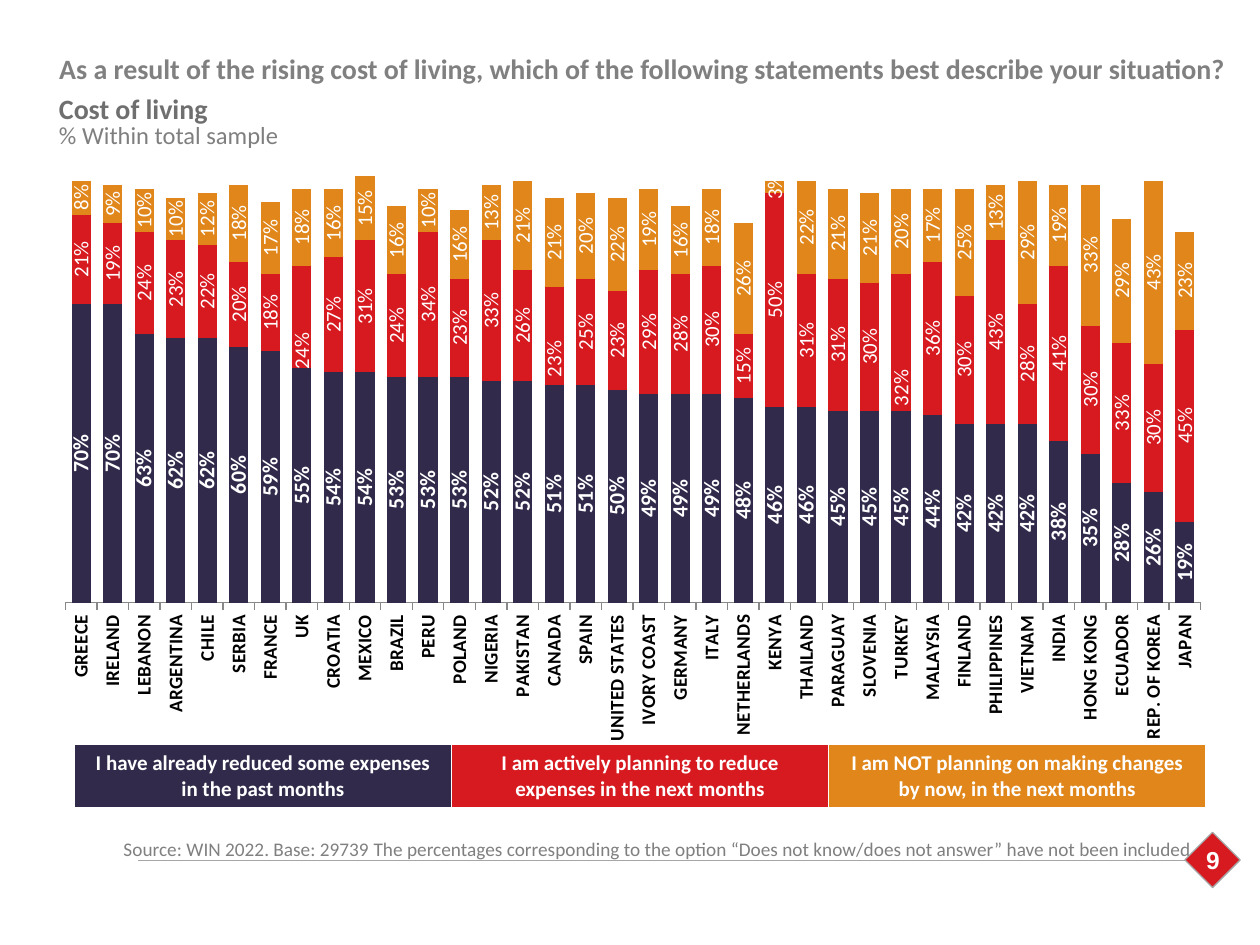
from dataclasses import dataclass
from typing import NamedTuple

from lxml.etree import SubElement
from pptx import Presentation
from pptx.chart.data import CategoryChartData
from pptx.dml.color import RGBColor
from pptx.enum.chart import XL_CHART_TYPE, XL_LABEL_POSITION, XL_TICK_MARK
from pptx.enum.shapes import MSO_CONNECTOR, MSO_SHAPE
from pptx.enum.text import MSO_ANCHOR, PP_ALIGN
from pptx.oxml.ns import qn
from pptx.oxml.xmlchemy import OxmlElement
from pptx.util import Cm, Pt


@dataclass(frozen=True)
class Theme:
    font: str = "Calibri"
    number_font: str = "Arial"
    navy: str = "312A4B"
    red: str = "D71920"
    orange: str = "E0861A"
    white: str = "FFFFFF"
    black: str = "000000"
    title: str = "808080"
    heading: str = "6F6F6F"
    muted: str = "7F7F7F"
    rule: str = "A6A6A6"
    axis: str = "888888"
    title_size: float = 16
    text_size: float = 14
    legend_size: float = 12
    small_size: float = 11


class Box(NamedTuple):
    """Left, top, width and height in centimetres."""
    x: float
    y: float
    w: float
    h: float

    def emu(self) -> list:
        return [Cm(v) for v in self]


class Answer(NamedTuple):
    text: str
    color: str
    label_size: float
    bold: bool
    percents: list
    label_shifts: dict  # category -> downward shift, share of chart height


T = Theme()

COUNTRIES = [
    "GREECE", "IRELAND", "LEBANON", "ARGENTINA", "CHILE", "SERBIA", "FRANCE", "UK", "CROATIA",
    "MEXICO", "BRAZIL", "PERU", "POLAND", "NIGERIA", "PAKISTAN", "CANADA", "SPAIN",
    "UNITED STATES", "IVORY COAST", "GERMANY", "ITALY", "NETHERLANDS", "KENYA", "THAILAND",
    "PARAGUAY", "SLOVENIA", "TURKEY", "MALAYSIA", "FINLAND", "PHILIPPINES", "VIETNAM", "INDIA",
    "HONG KONG", "ECUADOR", "REP. OF KOREA", "JAPAN",
]
ANSWERS = [
    Answer("I have already reduced some expenses in the past months", T.navy, 12.5, True,
           [70, 70, 63, 62, 62, 60, 59, 55, 54, 54, 53, 53, 53, 52, 52, 51, 51, 50,
            49, 49, 49, 48, 46, 46, 45, 45, 45, 44, 42, 42, 42, 38, 35, 28, 26, 19], {}),
    Answer("I am actively planning to reduce expenses in the next months", T.red, 12, False,
           [21, 19, 24, 23, 22, 20, 18, 24, 27, 31, 24, 34, 23, 33, 26, 23, 25, 23,
            29, 28, 30, 15, 50, 31, 31, 30, 32, 36, 30, 43, 28, 41, 30, 33, 30, 45],
           {"UK": 0.06, "CANADA": 0.04, "TURKEY": 0.08}),
    Answer("I am NOT planning on making changes by now, in the next months", T.orange, 12, False,
           [8, 9, 10, 10, 12, 18, 17, 18, 16, 15, 16, 10, 16, 13, 21, 21, 20, 22,
            19, 16, 18, 26, 3, 22, 21, 21, 20, 17, 25, 13, 29, 19, 33, 29, 43, 23], {}),
]


def style_font(font, size: float, color: str, bold: bool = False, name: str = T.font) -> None:
    font.name, font.size, font.bold = name, Pt(size), bold
    font.color.rgb = RGBColor.from_string(color)


def add_run(p, text: str, size: float, color: str, bold: bool = False, name: str = T.font) -> None:
    r = p.add_run()
    r.text = text
    style_font(r.font, size, color, bold, name)


def add_text_box(slide, box: Box):
    tf = slide.shapes.add_textbox(*box.emu()).text_frame
    tf.word_wrap = True
    return tf


def set_line(line, color: str, width: float = 0.75) -> None:
    line.color.rgb = RGBColor.from_string(color)
    line.width = Pt(width)


def turn_text(element) -> None:
    """Make the labels of a chart part read upwards."""
    body = element.find(qn("c:txPr")).find(qn("a:bodyPr"))
    body.set("rot", "-5400000")
    body.set("vert", "horz")


def hide_leader_lines(d_lbls) -> None:
    for flag in d_lbls.findall(qn("c:showLeaderLines")):
        flag.set("val", "0")


def manual_layout(**values):
    layout = OxmlElement("c:layout")
    manual = SubElement(layout, qn("c:manualLayout"))
    for tag, val in values.items():
        SubElement(manual, qn(f"c:{tag}")).set("val", str(val))
    return layout


def shift_label(point, shift: float, answer: Answer) -> None:
    label = point.data_label
    style_font(label.font, answer.label_size, T.white, answer.bold)
    label.position = XL_LABEL_POSITION.CENTER
    d_lbl = point._element.find(qn("c:dLbls")).findall(qn("c:dLbl"))[-1]
    num_fmt = OxmlElement("c:numFmt")
    num_fmt.set("formatCode", "0%")
    num_fmt.set("sourceLinked", "0")
    idx = d_lbl.find(qn("c:idx"))
    idx.addnext(num_fmt)
    idx.addnext(manual_layout(x=0, y=shift))
    turn_text(d_lbl)


def add_answer_chart(slide, box: Box) -> None:
    data = CategoryChartData(number_format="0%")
    data.categories = COUNTRIES
    for i, answer in enumerate(ANSWERS, 1):
        data.add_series(f"Series {i}", [v / 100 for v in answer.percents])
    chart = slide.shapes.add_chart(XL_CHART_TYPE.COLUMN_STACKED, *box.emu(), data).chart
    chart.has_legend = chart.has_title = False
    style_font(chart.font, 18, T.black)

    # Axes
    val = chart.value_axis
    val.minimum_scale, val.maximum_scale = 0, 1
    val.has_major_gridlines = val.visible = False
    cat = chart.category_axis
    cat.major_tick_mark = XL_TICK_MARK.OUTSIDE
    set_line(cat.format.line, T.axis)
    style_font(cat.tick_labels.font, T.small_size, T.black, True)
    turn_text(cat._element)

    # Plot area
    plot_area = chart._chartSpace.chart.plotArea
    for old in plot_area.findall(qn("c:layout")):
        plot_area.remove(old)
    plot_area.insert(0, manual_layout(layoutTarget="inner", xMode="edge", yMode="edge",
                                      x=0.016, y=0, w=0.969, h=0.752))

    # Columns and labels
    plot = chart.plots[0]
    plot.gap_width, plot.overlap, plot.vary_by_categories = 65, 100, False
    for series, answer in zip(plot.series, ANSWERS):
        series.format.fill.solid()
        series.format.fill.fore_color.rgb = RGBColor.from_string(answer.color)
        labels = series.data_labels
        labels.show_value = True
        labels.number_format, labels.number_format_is_linked = "0%", False
        labels.position = XL_LABEL_POSITION.CENTER
        style_font(labels.font, answer.label_size, T.white, answer.bold)
        turn_text(labels._element)
        hide_leader_lines(labels._element)
        for country, shift in answer.label_shifts.items():
            shift_label(series.points[COUNTRIES.index(country)], shift, answer)


def add_answer_key(slide, box: Box) -> None:
    table = slide.shapes.add_table(1, len(ANSWERS), *box.emu()).table
    for cell, answer in zip(table.rows[0].cells, ANSWERS):
        tc_pr = cell._tc.get_or_add_tcPr()
        for side in ("lnL", "lnR", "lnT", "lnB"):
            ln = SubElement(tc_pr, qn(f"a:{side}"), w=str(Pt(1)))
            SubElement(SubElement(ln, qn("a:solidFill")), qn("a:srgbClr"), val=T.white)
        cell.fill.solid()
        cell.fill.fore_color.rgb = RGBColor.from_string(answer.color)
        cell.vertical_anchor = MSO_ANCHOR.MIDDLE
        p = cell.text_frame.paragraphs[0]
        p.alignment = PP_ALIGN.CENTER
        add_run(p, answer.text, T.legend_size, T.white, True)


def add_footer(slide) -> None:
    # Rule
    rule = slide.shapes.add_connector(MSO_CONNECTOR.STRAIGHT, Cm(2.79), Cm(17.35), Cm(23.88), Cm(17.35))
    set_line(rule.line, T.rule)
    SubElement(rule._element.spPr, qn("a:effectLst"))
    # Page number on a diamond
    sp = slide.shapes.add_shape(MSO_SHAPE.RECTANGLE, *Box(24.05, 16.94, 0.79, 0.79).emu())
    sp.rotation = 315
    sp.shadow.inherit = False
    sp.fill.solid()
    sp.fill.fore_color.rgb = RGBColor.from_string(T.red)
    set_line(sp.line, T.rule)
    p = add_text_box(slide, Box(23.6, 16.92, 1.7, 0.86)).paragraphs[0]
    p.alignment = PP_ALIGN.CENTER
    add_run(p, "9", T.text_size, T.white, True, T.number_font)
    # Source
    p = add_text_box(slide, Box(2.24, 16.76, 22.71, 1.19)).paragraphs[0]
    add_run(p, "Source: WIN 2022. Base: 29739 ", T.small_size, T.title)
    add_run(p, "The percentages corresponding to the option “Does not know/does not answer” "
               "have not been included", T.small_size, T.muted)


def main() -> None:
    prs = Presentation()
    prs.slide_width, prs.slide_height = Cm(25.4), Cm(19.05)
    slide = prs.slides.add_slide(prs.slide_layouts[5])
    # Title
    title = slide.shapes.title
    title.left, title.top, title.width, title.height = Box(0.94, 0.91, 24.51, 0.94).emu()
    tf = title.text_frame
    tf.vertical_anchor = MSO_ANCHOR.TOP
    p = tf.paragraphs[0]
    p.alignment = PP_ALIGN.LEFT
    add_run(p, "As a result of the rising cost of living, which of the following statements "
               "best describe your situation?", T.title_size, T.title, True)
    # Heading
    tf = add_text_box(slide, Box(0.94, 1.73, 22.96, 1.42))
    add_run(tf.paragraphs[0], "Cost of living", T.title_size, T.heading, True)
    p = tf.add_paragraph()
    p.alignment, p.line_spacing = PP_ALIGN.JUSTIFY, 0.8
    add_run(p, "% Within total sample", T.text_size, T.muted)
    # Chart, its key and the footer
    add_answer_chart(slide, Box(0.94, 3.51, 23.62, 11.48))
    add_answer_key(slide, Box(1.5, 15.01, 22.81, 1.12))
    add_footer(slide)
    prs.save("out.pptx")


if __name__ == "__main__":
    main()
